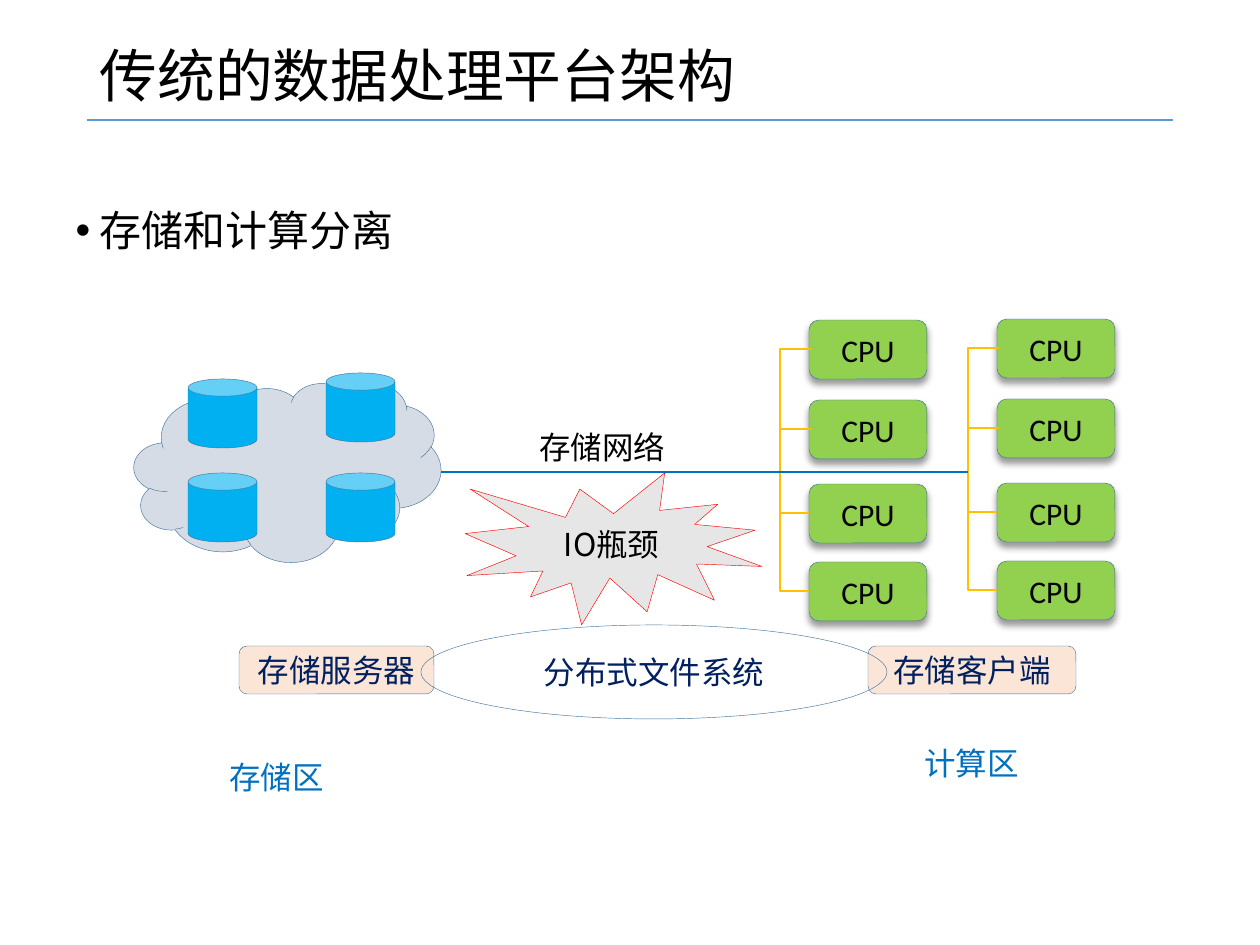
from lxml.etree import SubElement
from pptx import Presentation
from pptx.dml.color import RGBColor
from pptx.enum.shapes import MSO_CONNECTOR, MSO_SHAPE
from pptx.enum.text import MSO_ANCHOR, MSO_AUTO_SIZE, PP_ALIGN
from pptx.oxml.ns import qn
from pptx.util import Emu, Pt

PIXELS_PER_INCH = 126
COLOURS = {
    "black": "000000", "rule": "5B9BD5", "outline": "43739E", "cloud": "D6DCE5",
    "disk": "00B0F0", "cpu": "92D050", "bracket": "FFC000", "network": "0070C0",
    "role": "FBE5D6", "navy": "002060", "burst": "E7E6E6", "alert": "FF0000",
}
LATIN, CHINESE = "Calibri", "Noto Sans CJK SC"
CPU_WIDTH, CPU_HEIGHT = 118, 59
CPU_ROWS = (319, 399, 483, 561)
CPU_COLUMNS = ((997, 0), (809, 1))
DISKS = ((188, 379), (326, 373), (188, 473), (326, 473))


def px(*lengths):
    """Turn pixel lengths into EMU."""
    return [Emu(round(length * 914400 / PIXELS_PER_INCH)) for length in lengths]


def rgb(name):
    """Look up a named colour."""
    return RGBColor.from_string(COLOURS[name])


def apply_format(target, values):
    """Set each attribute of the target from a dict."""
    for name, value in values.items():
        setattr(target, name, value)


def write_text(shape, text, font=LATIN, size=18, colour="black", frame=None, paragraph=None):
    """Write one formatted paragraph into a shape."""
    apply_format(shape.text_frame, frame or {})
    first = shape.text_frame.paragraphs[0]
    apply_format(first, paragraph or {})
    run = first.add_run()
    apply_format(run, {"text": text})
    apply_format(run.font, {"name": font, "size": Pt(size)})
    run.font.color.rgb = rgb(colour)
    SubElement(run.font._element, qn("a:ea"), typeface=CHINESE)


def fill_placeholder(shape, box, text, size, frame, paragraph):
    """Move a template placeholder and write its text."""
    apply_format(shape, dict(zip(("left", "top", "width", "height"), px(*box))))
    write_text(shape, text, size=size, frame=frame, paragraph=paragraph)


def add_bullet(paragraph, indent):
    """Give a paragraph a round bullet with a hanging indent."""
    properties = paragraph._p.get_or_add_pPr()
    properties.set("marL", str(px(indent)[0]))
    properties.set("indent", str(-px(indent)[0]))
    SubElement(properties, qn("a:buFont"), typeface="Arial")
    SubElement(properties, qn("a:buChar"), char="•")


def add_block(slide, kind, box, fill=None, line="outline", text=None, **text_format):
    """Add a preset shape with an optional centred label."""
    shape = slide.shapes.add_shape(kind, *px(*box))
    shape.shadow.inherit = False
    if fill:
        shape.fill.solid()
        shape.fill.fore_color.rgb = rgb(fill)
    else:
        shape.fill.background()
    shape.line.width = Pt(0.25)
    shape.line.color.rgb = rgb(line)
    if text:
        write_text(shape, text, frame={"vertical_anchor": MSO_ANCHOR.MIDDLE},
                   paragraph={"alignment": PP_ALIGN.CENTER}, **text_format)
    return shape


def add_drop_shadow(shape):
    """Cast a soft shadow straight down."""
    effects = shape._element.spPr.find(qn("a:effectLst"))
    shadow = SubElement(effects, qn("a:outerShdw"), blurRad=str(Pt(4)), dist=str(Pt(3)),
                        dir="5400000", algn="t", rotWithShape="0")
    colour = SubElement(shadow, qn("a:srgbClr"), val=COLOURS["black"])
    SubElement(colour, qn("a:alpha"), val="40000")


def add_line(slide, ends, colour, width, kind=MSO_CONNECTOR.STRAIGHT):
    """Add a connector without a shadow."""
    connector = slide.shapes.add_connector(kind, *px(*ends))
    connector.line.color.rgb = rgb(colour)
    connector.line.width = Pt(width)
    SubElement(connector._element.spPr, qn("a:effectLst"))
    return connector


def add_bracket(slide, left, top, bottom):
    """Join two CPUs by an elbow that runs left of their column."""
    overlap, reach = 2, 29
    connector = add_line(slide, (left + overlap, top, left, bottom), "bracket", 1.5,
                         MSO_CONNECTOR.ELBOW)
    geometry = connector._element.spPr.find(qn("a:prstGeom"))
    ratio = round((reach + overlap) / overlap * 100000)
    SubElement(geometry.get_or_add_avLst(), qn("a:gd"), name="adj1", fmla=f"val {ratio}")


def add_label(slide, box, text, colour):
    """Add a text box that grows with its single line."""
    label = slide.shapes.add_textbox(*px(*box))
    write_text(label, text, font=CHINESE, colour=colour,
               frame={"word_wrap": False, "auto_size": MSO_AUTO_SIZE.SHAPE_TO_FIT_TEXT})


def add_cpu_column(slide, left, shift):
    """Add a column of CPUs and the brackets that link them."""
    tops = [row + shift for row in CPU_ROWS]
    for top in tops:
        add_drop_shadow(add_block(slide, MSO_SHAPE.ROUNDED_RECTANGLE,
                                  (left, top, CPU_WIDTH, CPU_HEIGHT), "cpu", text="CPU"))
    middles = [top + CPU_HEIGHT // 2 for top in tops]
    for top, bottom in zip(middles[:2], middles[2:]):
        add_bracket(slide, left, top, bottom)


def main():
    """Build the slide and save it."""
    presentation = Presentation()
    apply_format(presentation, dict(zip(("slide_width", "slide_height"), px(1260, 945))))
    slide = presentation.slides.add_slide(presentation.slide_layouts[1])

    add_line(slide, (87, 120, 1173, 120), "rule", 1)
    fill_placeholder(slide.shapes.title, (87, 11, 1086, 136), "传统的数据处理平台架构", 33,
                     {"vertical_anchor": MSO_ANCHOR.MIDDLE, "auto_size": MSO_AUTO_SIZE.NONE},
                     {"alignment": PP_ALIGN.LEFT, "line_spacing": 0.9})
    body = slide.placeholders[1]
    fill_placeholder(body, (63, 204, 1134, 89), "存储和计算分离", 24,
                     {"vertical_anchor": MSO_ANCHOR.TOP, "auto_size": MSO_AUTO_SIZE.NONE},
                     {"line_spacing": 0.9, "space_before": Pt(7.5)})
    add_bullet(body.text_frame.paragraphs[0], 24)

    add_block(slide, MSO_SHAPE.CLOUD, (134, 383, 307, 179), "cloud")
    for left, top in DISKS:
        add_block(slide, MSO_SHAPE.CAN, (left, top, 69, 69), "disk")
    for left, shift in CPU_COLUMNS:
        add_cpu_column(slide, left, shift)
    add_line(slide, (441, 472, 968, 472), "network", 1.5)

    add_label(slide, (217, 752, 121, 50), "存储区", "network")
    add_label(slide, (527, 422, 152, 50), "存储网络", "black")
    add_label(slide, (912, 738, 121, 50), "计算区", "network")

    for left, width, role in ((239, 195, "存储服务器"), (868, 208, "存储客户端")):
        add_block(slide, MSO_SHAPE.ROUNDED_RECTANGLE, (left, 646, width, 48), "role",
                  text=role, colour="navy")
    add_block(slide, MSO_SHAPE.OVAL, (421, 625, 466, 94), text="分布式文件系统",
              font=CHINESE, colour="navy")
    add_block(slide, MSO_SHAPE.EXPLOSION1, (465, 473, 297, 152), "burst", "alert",
              text="IO瓶颈", font=CHINESE)
    presentation.save("out.pptx")


if __name__ == "__main__":
    main()
